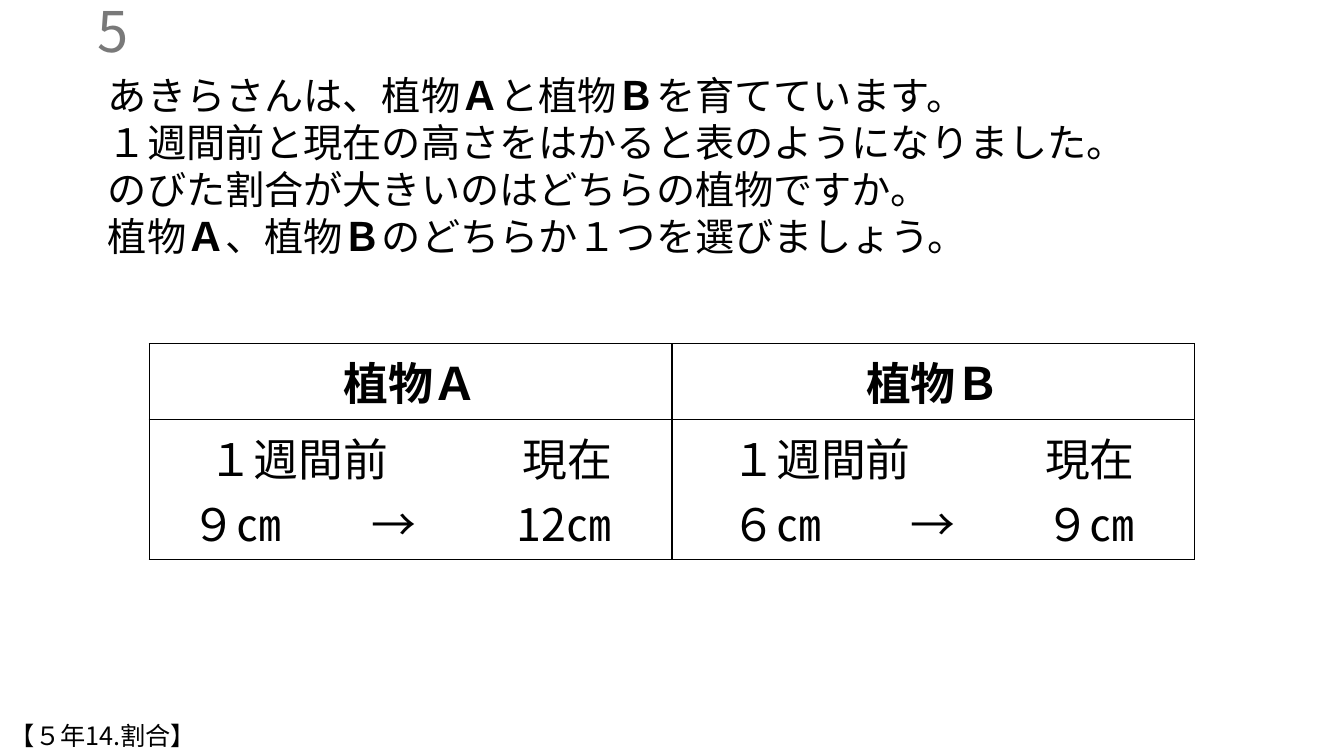
from dataclasses import dataclass
from lxml.etree import SubElement
from pptx import Presentation
from pptx.dml.color import RGBColor
from pptx.enum.text import MSO_ANCHOR, MSO_AUTO_SIZE, PP_ALIGN
from pptx.oxml.ns import qn
from pptx.util import Inches, Pt


@dataclass(frozen=True)
class Theme:
    font: str = "Noto Sans CJK JP"
    ink: RGBColor = RGBColor(0, 0, 0)
    muted: RGBColor = RGBColor(0x79, 0x79, 0x79)
    paper: RGBColor = RGBColor(255, 255, 255)
    number: int = 40
    table: int = 32
    body: int = 28
    footer: int = 18
    leading: float = 1.2


THEME = Theme()

PROBLEM = [
    [("あきらさんは、植物", False), ("Ａ", True), ("と植物", False),
     ("Ｂ", True), ("を育てています。", False)],
    [("１週間前と現在の高さをはかると表のようになりました。", False)],
    [("のびた割合が大きいのはどちらの植物ですか。", False)],
    [("植物", False), ("Ａ", True), ("、植物", False),
     ("Ｂ", True), ("のどちらか１つを選びましょう。", False)],
]

HEADING_STOPS = (0.49, 3.6)
PLANTS = [
    ("植物Ａ", ("９㎝", "→", "12㎝"), (0.32, 2.1, 3.54)),
    ("植物Ｂ", ("６㎝", "→", "９㎝"), (0.49, 2.27, 3.6)),
]


def add_span(para, text, size, color=THEME.ink, bold=False):
    span = para.add_run()
    span.text = text
    span.font.size = Pt(size)
    span.font.name = THEME.font
    span.font.bold = bold
    span.font.color.rgb = color
    SubElement(span._r.get_or_add_rPr(), qn("a:ea"), typeface=THEME.font)


def place(shape, box):
    shape.left, shape.top, shape.width, shape.height = (Inches(n) for n in box)
    shape.text_frame.word_wrap = True
    shape.text_frame.auto_size = MSO_AUTO_SIZE.NONE
    return shape.text_frame


def add_number(page, box):
    frame = place(page.shapes.title, box)
    frame.vertical_anchor = MSO_ANCHOR.MIDDLE
    para = frame.paragraphs[0]
    para.alignment = PP_ALIGN.RIGHT
    add_span(para, "5", THEME.number, THEME.muted)


def add_problem(page, box):
    frame = place(page.placeholders[1], box)
    frame.vertical_anchor = MSO_ANCHOR.TOP
    for index, line in enumerate(PROBLEM):
        para = frame.add_paragraph() if index else frame.paragraphs[0]
        properties = para._p.get_or_add_pPr()
        properties.set("marL", "0")
        properties.set("indent", "0")
        SubElement(properties, qn("a:buNone"))
        para.space_before = Pt(0)
        para.line_spacing = Pt(THEME.body * THEME.leading)
        for text, bold in line:
            add_span(para, text, THEME.body, bold=bold)


def style_cell(cell):
    properties = cell._tc.get_or_add_tcPr()
    for side in ("lnL", "lnR", "lnT", "lnB"):
        line = SubElement(properties, qn(f"a:{side}"), w=str(Pt(1)))
        fill = SubElement(line, qn("a:solidFill"))
        SubElement(fill, qn("a:srgbClr"), val=str(THEME.ink))
    cell.fill.solid()
    cell.fill.fore_color.rgb = THEME.paper


def add_tabbed_line(para, words, stops):
    tabs = SubElement(para._p.get_or_add_pPr(), qn("a:tabLst"))
    for stop in stops:
        SubElement(tabs, qn("a:tab"), pos=str(Inches(stop)), algn="l")
    for word in words:
        add_span(para, "\t" + word, THEME.table)


def add_growth_table(page, box):
    left, top, width, height = (Inches(n) for n in box)
    table = page.shapes.add_table(2, len(PLANTS), left, top, width, height).table
    table.rows[0].height = Inches(0.75)
    table.rows[1].height = height - Inches(0.75)
    for column, (name, growth, stops) in enumerate(PLANTS):
        header, body = table.cell(0, column), table.cell(1, column)
        style_cell(header)
        style_cell(body)
        para = header.text_frame.paragraphs[0]
        para.alignment = PP_ALIGN.CENTER
        add_span(para, name, THEME.table, bold=True)
        frame = body.text_frame
        add_tabbed_line(frame.paragraphs[0], ("１週間前", "現在"), HEADING_STOPS)
        add_tabbed_line(frame.add_paragraph(), growth, stops)


def add_unit_label(page, box):
    frame = place(page.shapes.add_textbox(0, 0, 0, 0), box)
    para = frame.paragraphs[0]
    para.line_spacing = Pt(THEME.footer * THEME.leading)
    add_span(para, "【５年14.割合】", THEME.footer)


def main():
    deck = Presentation()
    deck.slide_width, deck.slide_height = Inches(13.33), Inches(7.5)
    page = deck.slides.add_slide(deck.slide_layouts[1])
    add_number(page, (-1.63, 0.1, 3, 0.4))
    add_growth_table(page, (1.48, 3.41, 10.37, 2.14))
    add_problem(page, (0.97, 0.66, 11.97, 1.99))
    add_unit_label(page, (0, 7.1, 7.49, 0.4))
    deck.save("out.pptx")


if __name__ == "__main__":
    main()
